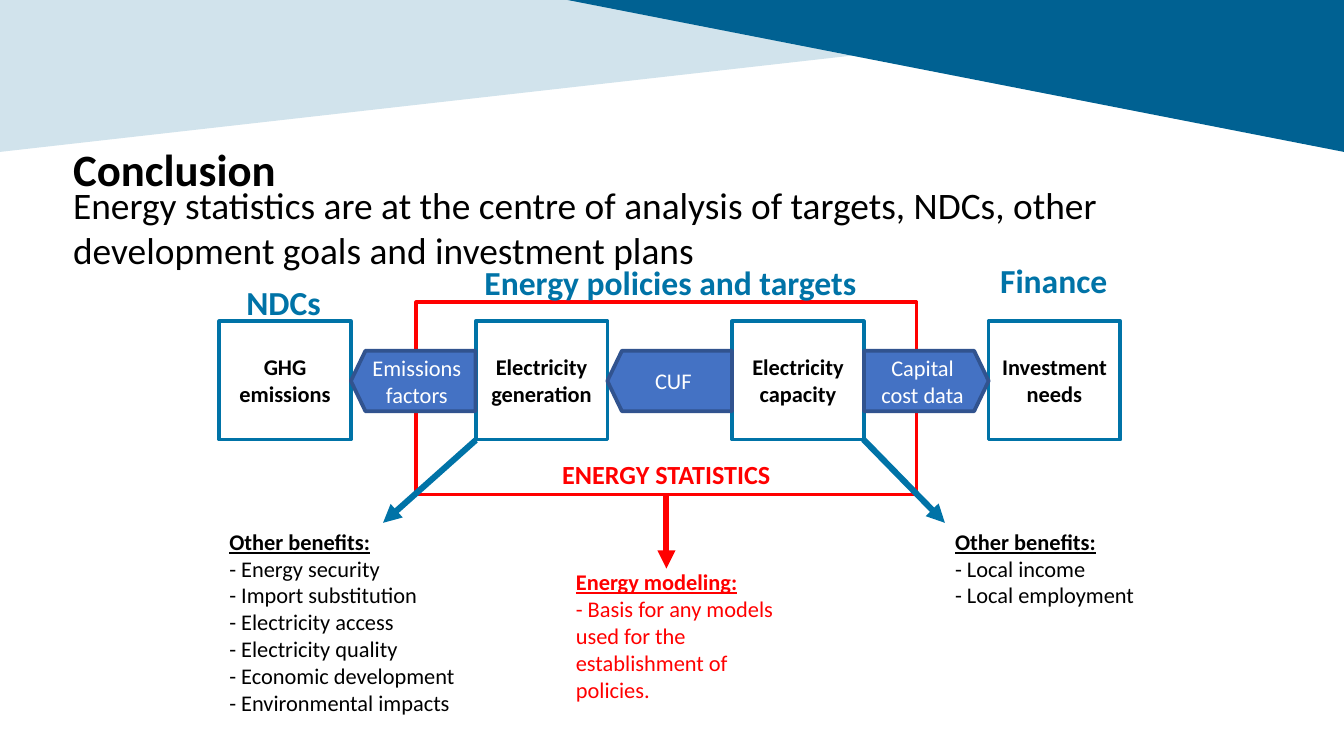
"""Build the conclusion slide on energy statistics."""
from dataclasses import dataclass

from lxml.etree import SubElement
from pptx import Presentation
from pptx.dml.color import RGBColor
from pptx.enum.shapes import MSO_CONNECTOR, MSO_SHAPE
from pptx.enum.text import MSO_ANCHOR, MSO_AUTO_SIZE, PP_ALIGN
from pptx.oxml.ns import qn
from pptx.util import Pt

BLUE, RED, BLACK, WHITE = "0073A7", "FF0000", "000000", "FFFFFF"
LEFT, MID = PP_ALIGN.LEFT, PP_ALIGN.CENTER
BOX_X, BOX_Y, BOX_W, BOX_H, STEP = 117.4, 172.1, 70.6, 63.4, 137.4
FLAG_Y, FLAG_H = 187.9, 32.4


@dataclass(frozen=True)
class Area:
    left: float
    top: float
    width: float
    height: float

    def place(self) -> tuple:
        return Pt(self.left), Pt(self.top), Pt(self.width), Pt(self.height)


@dataclass(frozen=True)
class Style:
    size: float
    color: str = BLACK
    bold: bool = False
    align: PP_ALIGN = MID
    anchor: MSO_ANCHOR = MSO_ANCHOR.MIDDLE


@dataclass(frozen=True)
class Label:
    text: str
    area: Area
    style: Style


@dataclass(frozen=True)
class Flag:
    text: str
    flip: bool


@dataclass(frozen=True)
class Arrow:
    start: tuple
    end: tuple
    color: str


def paint(target, color: str) -> None:
    target.rgb = RGBColor.from_string(color)


def fill_solid(shape, color: str) -> None:
    shape.fill.solid()
    paint(shape.fill.fore_color, color)


def write(shape, text: str, style: Style) -> None:
    frame = shape.text_frame
    frame.text = text
    frame.word_wrap = True
    frame.auto_size = MSO_AUTO_SIZE.NONE
    frame.vertical_anchor = style.anchor
    frame.margin_left = frame.margin_right = Pt(5.4)
    frame.margin_top = frame.margin_bottom = Pt(2.7)
    for para in frame.paragraphs:
        para.alignment = style.align
        for run in para.runs:
            font = run.font
            font.name, font.size, font.bold = "Calibri", Pt(style.size), style.bold
            paint(font.color, style.color)


def head_line(shape) -> None:
    font = shape.text_frame.paragraphs[0].runs[0].font
    font.bold = font.underline = True


def move(shape, area: Area) -> None:
    shape.left, shape.top, shape.width, shape.height = area.place()


def add_text(shapes, label: Label):
    box = shapes.add_textbox(*label.area.place())
    write(box, label.text, label.style)
    return box


def add_box(shapes, label: Label, line: str, kind=MSO_SHAPE.RECTANGLE, fill: str = ""):
    box = shapes.add_shape(kind, *label.area.place())
    box.shadow.inherit = False
    if fill:
        fill_solid(box, fill)
    else:
        box.fill.background()
    paint(box.line.color, line)
    box.line.width = Pt(2)
    write(box, label.text, label.style)
    return box


def add_wedge(shapes, points: list, color: str) -> None:
    first, *rest = [(Pt(x), Pt(y)) for x, y in points]
    build = shapes.build_freeform(*first)
    build.add_line_segments(rest, close=True)
    wedge = build.convert_to_shape()
    wedge.shadow.inherit = False
    fill_solid(wedge, color)
    wedge.line.fill.background()


def add_arrow(shapes, arrow: Arrow):
    ends = [Pt(v) for v in arrow.start + arrow.end]
    link = shapes.add_connector(MSO_CONNECTOR.STRAIGHT, *ends)
    paint(link.line.color, arrow.color)
    link.line.width = Pt(3.25)
    props = link.element.spPr
    SubElement(props.find(qn("a:ln")), qn("a:tailEnd"), type="triangle")
    SubElement(props, qn("a:effectLst"))
    return link


def fill_list(holder, label: Label) -> None:
    move(holder, label.area)
    write(holder, label.text, label.style)
    head_line(holder)
    for para in holder.text_frame.paragraphs:
        para.space_before = Pt(0)
        props = para._p.get_or_add_pPr()
        props.set("marL", "0")
        props.set("indent", "0")
        SubElement(props, qn("a:buNone"))


def main() -> None:
    deck = Presentation()
    deck.slide_width, deck.slide_height = Pt(720), Pt(405)
    slide = deck.slides.add_slide(deck.slide_layouts[3])
    shapes = slide.shapes
    title, *lists = slide.placeholders
    plain = Style(12, align=LEFT, anchor=MSO_ANCHOR.TOP)
    red = Style(12, RED, align=LEFT, anchor=MSO_ANCHOR.TOP)

    add_wedge(shapes, [(0, 0), (720, 0), (0, 81.4)], "D1E3EC")
    add_wedge(shapes, [(304, 0), (720, 0), (720, 81.4)], "006192")

    move(title, Area(33.8, 59, 516, 70.6))
    write(title, "Conclusion", Style(24, BLACK, True, LEFT, MSO_ANCHOR.TOP))
    title.text_frame.paragraphs[0].line_spacing = 1.5

    benefits = [
        Label("Other benefits:\n- Energy security\n- Import substitution\n"
              "- Electricity access\n- Electricity quality\n"
              "- Economic development\n- Environmental impacts",
              Area(117.4, 280.1, 132.5, 121.7), plain),
        Label("Other benefits:\n- Local income\n- Local employment",
              Area(506.2, 280.1, 110.2, 49), plain),
    ]
    for holder, label in zip(lists, benefits):
        fill_list(holder, label)

    stats = add_box(shapes, Label(
        "ENERGY STATISTICS", Area(223, 162, 268, 103),
        Style(14, RED, True, anchor=MSO_ANCHOR.BOTTOM)), RED)
    add_text(shapes, Label(
        "Energy statistics are at the centre of analysis of targets, NDCs, "
        "other development goals and investment plans",
        Area(33.8, 95, 671.8, 52.6), Style(20, align=LEFT, anchor=MSO_ANCHOR.TOP)))

    names = ["GHG emissions", "Electricity generation",
             "Electricity capacity", "Investment needs"]
    for i, name in enumerate(names):
        area = Area(BOX_X + i * STEP, BOX_Y, BOX_W, BOX_H)
        add_box(shapes, Label(name, area, Style(12, bold=True)), BLUE)

    flags = [Flag("Emissions factors", True), Flag("CUF", True),
             Flag("Capital cost data", False)]
    for i, flag in enumerate(flags):
        area = Area(BOX_X + BOX_W + i * STEP, FLAG_Y, STEP - BOX_W, FLAG_H)
        shape = add_box(shapes, Label(flag.text, area, Style(12, WHITE)),
                        "31538F", MSO_SHAPE.PENTAGON, "4472C4")
        shape.adjustments[0] = 0.24
        if flag.flip:
            shape.element.spPr.get_or_add_xfrm().set("flipH", "1")

    heads = [("NDCs", Area(116.6, 148.3, 70.6, 27.4)),
             ("Energy policies and targets", Area(249.8, 137.5, 218.9, 27.4)),
             ("Finance", Area(529.2, 136.8, 70.6, 27.4))]
    for text, area in heads:
        add_text(shapes, Label(text, area, Style(18, BLUE, True, anchor=MSO_ANCHOR.TOP)))

    add_arrow(shapes, Arrow((254.9, 235.8), (205.2, 280.1), BLUE))
    add_arrow(shapes, Arrow((462.6, 235.5), (506.2, 280.1), BLUE))
    model = add_text(shapes, Label(
        "Energy modeling:\n- Basis for any models used for the establishment of policies.",
        Area(303.1, 301.7, 132.5, 78.5), red))
    head_line(model)
    add_arrow(shapes, Arrow((357, 265), (357, 304.6), RED)).begin_connect(stats, 2)

    deck.save("out.pptx")


if __name__ == "__main__":
    main()
